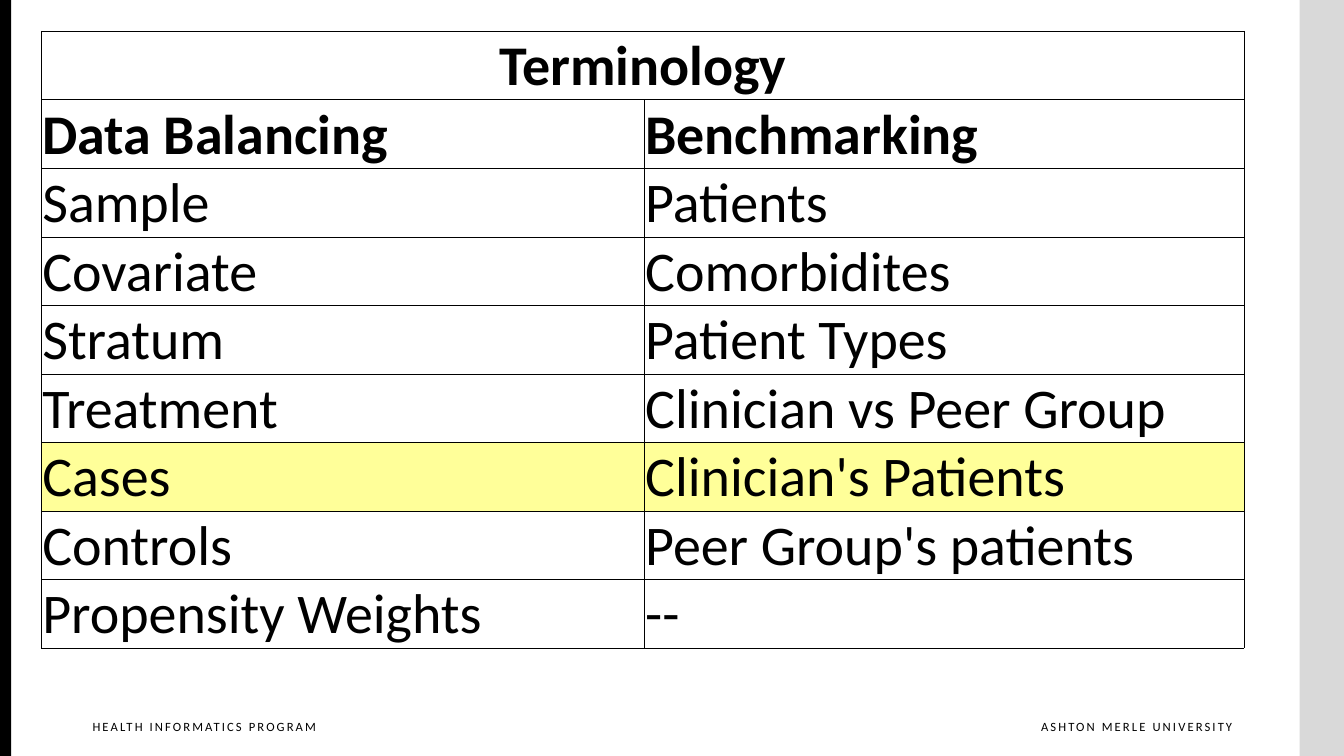
from lxml.etree import SubElement
from pptx import Presentation
from pptx.dml.color import RGBColor
from pptx.enum.shapes import MSO_SHAPE
from pptx.enum.text import MSO_ANCHOR, PP_ALIGN
from pptx.oxml.ns import qn
from pptx.util import Inches, Pt

BLACK = RGBColor(0x00, 0x00, 0x00)
GREY = RGBColor(0xD9, 0xD9, 0xD9)
YELLOW = RGBColor(0xFF, 0xFF, 0x99)

TITLE = "Terminology"
TERMS = [
    ("Data Balancing", "Benchmarking"),
    ("Sample", "Patients"),
    ("Covariate", "Comorbidites"),
    ("Stratum", "Patient Types"),
    ("Treatment", "Clinician vs Peer Group"),
    ("Cases", "Clinician's Patients"),
    ("Controls", "Peer Group's patients"),
    ("Propensity Weights", "--"),
]
HIGHLIGHTED = "Cases"
COLUMN_WIDTHS = (5.98, 5.95)
ROW_HEIGHT = 0.68
CELL_FORMAT = {
    "vertical_anchor": MSO_ANCHOR.MIDDLE,
    "margin_left": Inches(0.01),
    "margin_right": Inches(0.01),
    "margin_top": Inches(0.01),
    "margin_bottom": 0,
}


def set_all(target, values):
    for name, value in values.items():
        setattr(target, name, value)


def write(tf, text, size, align=PP_ALIGN.LEFT, bold=False):
    p = tf.paragraphs[0]
    p.alignment = align
    r = p.add_run()
    r.text = text
    set_all(r.font, {"name": "Calibri", "size": Pt(size), "bold": bold})
    r.font.color.rgb = BLACK
    return r


def add_bar(s, left, width, color):
    bar = s.shapes.add_shape(MSO_SHAPE.RECTANGLE, Inches(left), 0,
                             Inches(width), Inches(7.5))
    bar.shadow.inherit = False
    bar.fill.solid()
    bar.fill.fore_color.rgb = color
    bar.line.fill.background()


def add_footer(s, left, width, text, align):
    sp = s.shapes.add_textbox(Inches(left), Inches(7.08), Inches(width), Inches(0.33))
    tf = sp.text_frame
    set_all(tf, {"word_wrap": True, "margin_left": Inches(0.1), "margin_right": 0,
                 "margin_top": Inches(0.05), "margin_bottom": Inches(0.05)})
    r = write(tf, text, 9, align)
    r.font._element.set("spc", "150")  # letter spacing, 1.5 pt


def add_borders(cell):
    tcPr = cell._tc.get_or_add_tcPr()
    for side in ("a:lnL", "a:lnR", "a:lnT", "a:lnB"):
        ln = SubElement(tcPr, qn(side), w=str(Pt(0.5)))
        fill = SubElement(ln, qn("a:solidFill"))
        SubElement(fill, qn("a:srgbClr"), val=str(BLACK))


def add_terms_table(s):
    rows = [(TITLE, "")] + TERMS
    table = s.shapes.add_table(len(rows), 2, Inches(0.41), Inches(0.31),
                               Inches(sum(COLUMN_WIDTHS)),
                               Inches(ROW_HEIGHT * len(rows))).table
    set_all(table, {"first_row": False, "horz_banding": False})
    for column, width in zip(table.columns, COLUMN_WIDTHS):
        column.width = Inches(width)
    table.cell(0, 0).merge(table.cell(0, 1))

    for i, row in enumerate(rows):
        for j, text in enumerate(row):
            cell = table.cell(i, j)
            set_all(cell, CELL_FORMAT)
            add_borders(cell)
            if row[0] == HIGHLIGHTED:
                cell.fill.solid()
                cell.fill.fore_color.rgb = YELLOW
            else:
                cell.fill.background()
            if text:
                align = PP_ALIGN.CENTER if i == 0 else PP_ALIGN.LEFT
                write(cell.text_frame, text, 40, align, bold=i < 2)


def main():
    prs = Presentation()
    prs.slide_width, prs.slide_height = Inches(13.33), Inches(7.5)
    s = prs.slides.add_slide(prs.slide_layouts[6])

    # Side bars
    add_bar(s, 12.89, 0.44, GREY)
    add_bar(s, 0, 0.11, BLACK)

    # Footers
    add_footer(s, 9.87, 2.35, "ASHTON MERLE UNIVERSITY", PP_ALIGN.RIGHT)
    add_footer(s, 0.82, 2.54, "HEALTH INFORMATICS PROGRAM", PP_ALIGN.LEFT)

    # Terminology table
    add_terms_table(s)
    prs.save("out.pptx")


if __name__ == "__main__":
    main()
